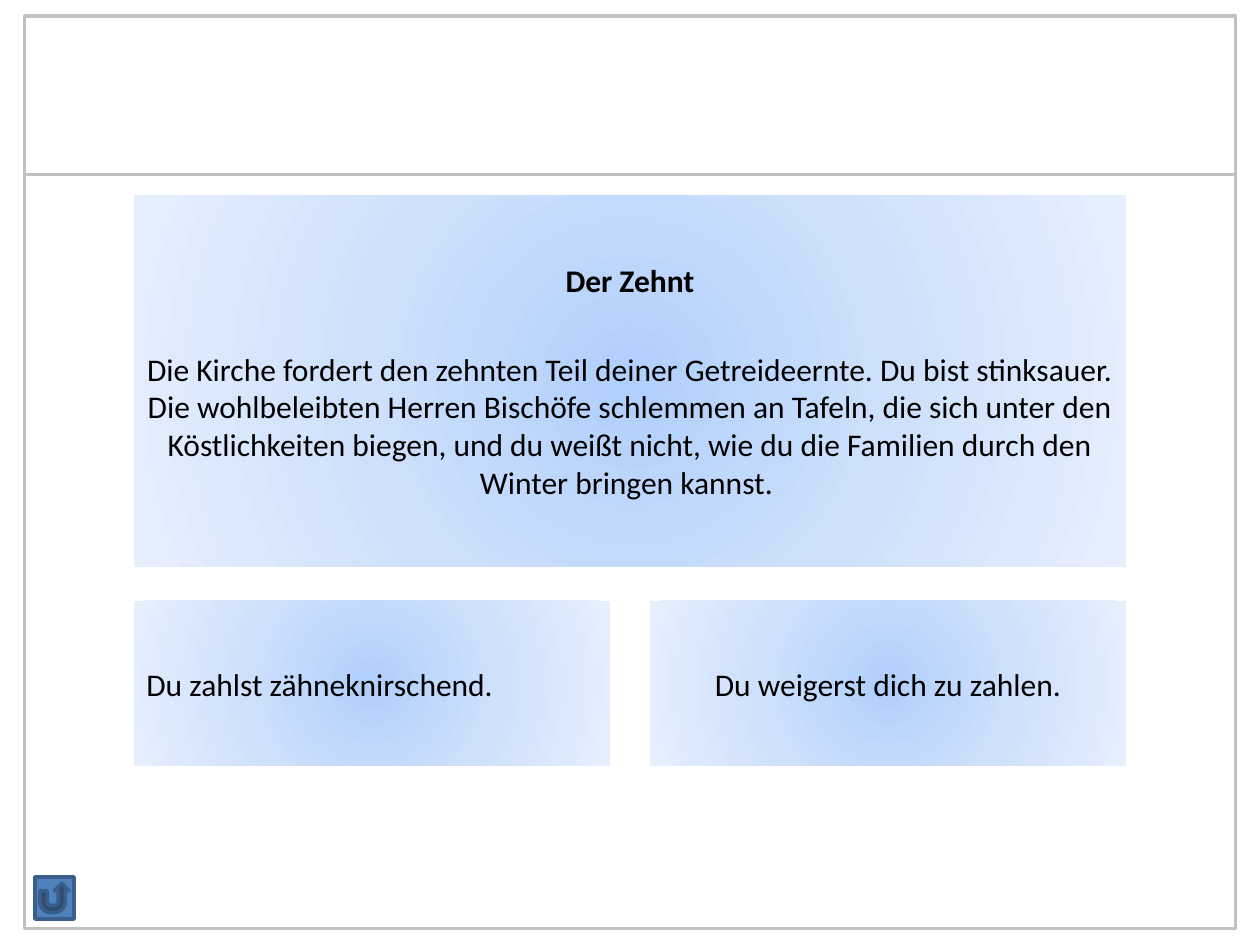
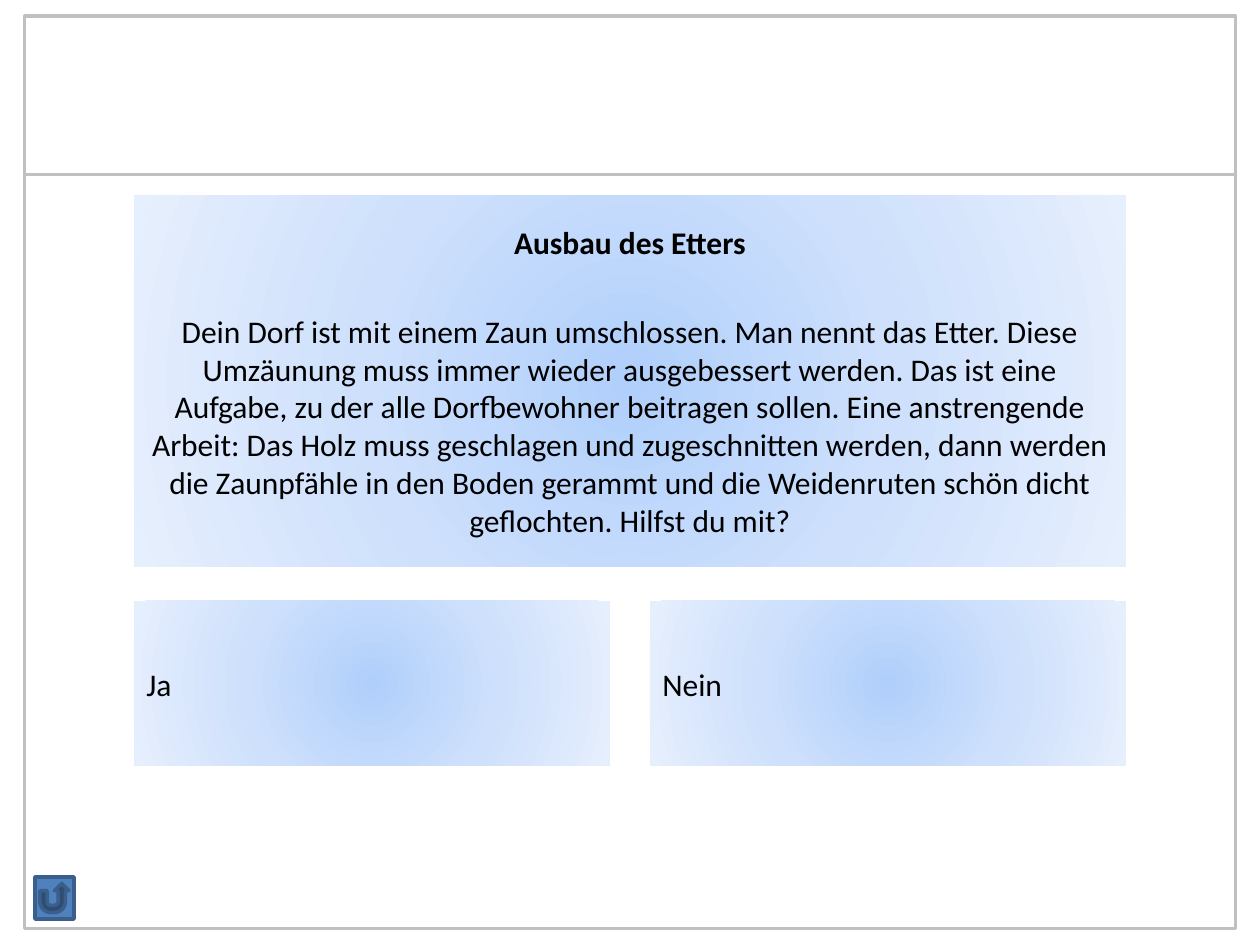
import lxml.etree
import pptx
import pptx.dml.color
import pptx.enum.shapes
import pptx.enum.text
import pptx.oxml.ns
import pptx.util

PX = 914400 / 126
FONT = "Calibri"
TEXT_SIZE = pptx.util.Pt(18)
HEADING_GAP = pptx.util.Pt(29)

BLACK = pptx.dml.color.RGBColor(0x00, 0x00, 0x00)
FRAME_GREY = pptx.dml.color.RGBColor(0xC0, 0xC0, 0xC0)
BUTTON_BLUE = pptx.dml.color.RGBColor(0x4F, 0x81, 0xBD)
BUTTON_EDGE = pptx.dml.color.RGBColor(0x3A, 0x5F, 0x8C)
GLOW = (
    (0, pptx.dml.color.RGBColor(0xB0, 0xCF, 0xFB)),
    (50, pptx.dml.color.RGBColor(0xCE, 0xE0, 0xFC)),
    (100, pptx.dml.color.RGBColor(0xE6, 0xEF, 0xFD)),
)

FRAME_LEFT, FRAME_WIDTH = 25, 1211
CARD_LEFT, CARD_WIDTH = 134, 992
ANSWER_TOP, ANSWER_WIDTH, ANSWER_HEIGHT = 601, 476, 165

SHAPES = pptx.enum.shapes.MSO_SHAPE
LEFT = pptx.enum.text.PP_ALIGN.LEFT
CENTER = pptx.enum.text.PP_ALIGN.CENTER

EVENTS = (
    (
        "Der Zehnt",
        "Die Kirche fordert den zehnten Teil deiner Getreideernte. Du bist stinksauer. "
        "Die wohlbeleibten Herren Bischöfe schlemmen an Tafeln, die sich unter den "
        "Köstlichkeiten biegen, und du weißt nicht, wie du die Familien durch den "
        "Winter bringen kannst. ",
        (("Du zahlst zähneknirschend.", LEFT), ("Du weigerst dich zu zahlen.", CENTER)),
    ),
    (
        "Ausbau des Etters",
        "Dein Dorf ist mit einem Zaun umschlossen. Man nennt das Etter. Diese "
        "Umzäunung muss immer wieder ausgebessert werden. Das ist eine Aufgabe, zu der "
        "alle Dorfbewohner beitragen sollen. Eine anstrengende Arbeit: Das Holz muss "
        "geschlagen und zugeschnitten werden, dann werden die Zaunpfähle in den Boden "
        "gerammt und die Weidenruten schön dicht geflochten. Hilfst du mit?",
        (("Ja", LEFT), ("Nein", LEFT)),
    ),
)


def px(length):
    return pptx.util.Emu(round(length * PX))


def add_box(page, kind, left, top, width, height):
    box = page.shapes.add_shape(kind, px(left), px(top), px(width), px(height))
    box.shadow.inherit = False
    return box


def set_line(box, color, points):
    box.line.color.rgb = color
    box.line.width = pptx.util.Pt(points)


def add_frame(page, top, height):
    frame = add_box(page, SHAPES.RECTANGLE, FRAME_LEFT, top, FRAME_WIDTH, height)
    frame.fill.background()
    set_line(frame, FRAME_GREY, 1.75)


def set_glow(box):
    qn = pptx.oxml.ns.qn
    glow = lxml.etree.Element(qn("a:gradFill"), rotWithShape="1")
    stops = lxml.etree.SubElement(glow, qn("a:gsLst"))
    for percent, color in GLOW:
        stop = lxml.etree.SubElement(stops, qn("a:gs"), pos=str(percent * 1000))
        lxml.etree.SubElement(stop, qn("a:srgbClr"), val=str(color))
    circle = lxml.etree.SubElement(glow, qn("a:path"), path="circle")
    lxml.etree.SubElement(
        circle, qn("a:fillToRect"), {side: "50000" for side in "ltrb"}
    )
    box.element.spPr.find(qn("a:prstGeom")).addnext(glow)


def write(paragraph, text, alignment, bold=False):
    paragraph.text = text
    paragraph.alignment = alignment
    paragraph.font.name = FONT
    paragraph.font.size = TEXT_SIZE
    paragraph.font.bold = bold
    paragraph.font.color.rgb = BLACK


def add_card(page, left, top, width, height):
    card = add_box(page, SHAPES.RECTANGLE, left, top, width, height)
    set_glow(card)
    card.line.fill.background()
    card.text_frame.word_wrap = True
    card.text_frame.vertical_anchor = pptx.enum.text.MSO_ANCHOR.MIDDLE
    return card.text_frame


def add_story(page, heading, story):
    frame = add_card(page, CARD_LEFT, 195, CARD_WIDTH, 372)
    write(frame.paragraphs[0], heading, CENTER, bold=True)
    body = frame.add_paragraph()
    write(body, story, CENTER)
    body.space_before = HEADING_GAP


def add_answers(page, answers):
    step = CARD_WIDTH - ANSWER_WIDTH
    for column, (answer, alignment) in enumerate(answers):
        left = CARD_LEFT + column * step
        frame = add_card(page, left, ANSWER_TOP, ANSWER_WIDTH, ANSWER_HEIGHT)
        write(frame.paragraphs[0], answer, alignment)


def add_return_button(page):
    button = add_box(page, SHAPES.ACTION_BUTTON_RETURN, 35, 877, 39, 42)
    button.fill.solid()
    button.fill.fore_color.rgb = BUTTON_BLUE
    set_line(button, BUTTON_EDGE, 2)


def add_event(deck, heading, story, answers):
    page = deck.slides.add_slide(deck.slide_layouts[6])
    add_frame(page, 16, 159)
    add_frame(page, 175, 754)
    add_story(page, heading, story)
    add_answers(page, answers)
    add_return_button(page)


def main():
    deck = pptx.Presentation()
    deck.slide_width, deck.slide_height = px(1260), px(945)
    for event in EVENTS:
        add_event(deck, *event)
    deck.save("out.pptx")


if __name__ == "__main__":
    main()
